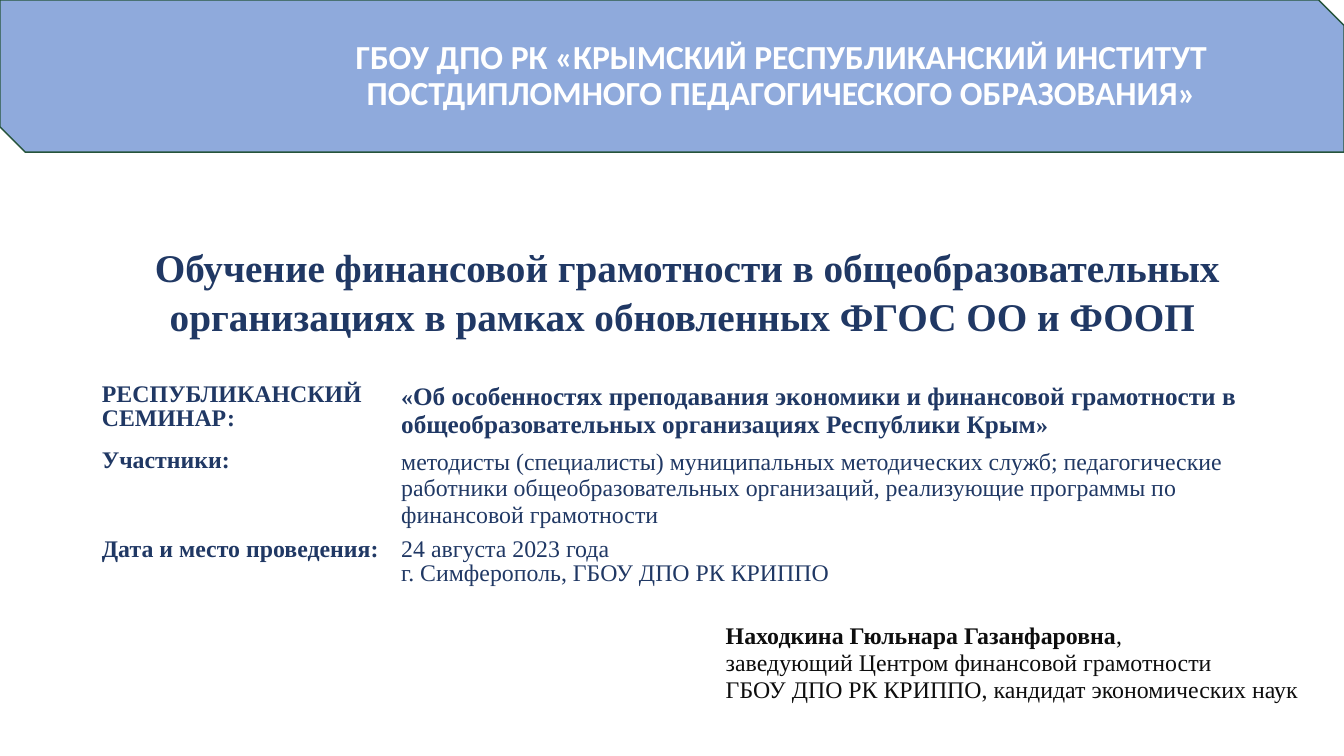
from lxml.etree import SubElement
from pptx import Presentation
from pptx.dml.color import RGBColor
from pptx.enum.shapes import MSO_SHAPE as Shape
from pptx.enum.text import MSO_ANCHOR as Anchor, PP_ALIGN as Align
from pptx.oxml.ns import qn
from pptx.util import Inches, Pt

NAVY, WHITE = "203864", "FFFFFF"
BANNER = "ГБОУ ДПО РК «КРЫМСКИЙ РЕСПУБЛИКАНСКИЙ ИНСТИТУТ ПОСТДИПЛОМНОГО ПЕДАГОГИЧЕСКОГО ОБРАЗОВАНИЯ»"
TITLE = "Обучение финансовой грамотности в общеобразовательных организациях в рамках обновленных ФГОС ОО и ФООП "
TOPIC = "Об особенностях преподавания экономики и финансовой грамотности в общеобразовательных организациях Республики Крым"
AUDIENCE = "методисты (специалисты) муниципальных методических служб; педагогические работники общеобразовательных организаций, реализующие программы по финансовой грамотности"

# Each text is a list of paragraphs; each paragraph is a list of (text, bold, size).
DETAILS = [
    ("РЕСПУБЛИКАНСКИЙ СЕМИНАР:", [[("«", True, 17), (TOPIC, True, 18), ("»", True, 17)]], 1.0),
    ("Участники:", [[(AUDIENCE, False, 17)]], 1.0),
    ("Дата и место проведения:", [[("24 августа 2023 года", False, 17)],
                                  [("г. Симферополь, ГБОУ ДПО РК КРИППО", False, 17)]], 0.9),
]
SPEAKER = [
    [("Находкина Гюльнара Газанфаровна", True, 17), (",", False, 17)],
    [("заведующий Центром финансовой грамотности", False, 17)],
    [("ГБОУ ДПО РК КРИППО, кандидат экономических наук", False, 17)],
]
COLUMN_WIDTHS = [2.97, 9.02]
ROW_HEIGHTS = [0.47, 0.51, 0.86]


def color(value):
    return RGBColor.from_string(value)


def write(frame, paragraphs, font="Times New Roman", ink=NAVY, align=Align.LEFT, spacing=1.0):
    frame.word_wrap = True
    for index, spans in enumerate(paragraphs):
        para = frame.paragraphs[0] if index == 0 else frame.add_paragraph()
        para.alignment = align
        para.line_spacing = spacing
        para.space_before = para.space_after = Pt(0)
        for text, bold, size in spans:
            span = para.add_run()
            span.text = text
            span.font.name = font
            span.font.size = Pt(size)
            span.font.bold = bold
            span.font.color.rgb = color(ink)


def set_borders(cell, bottom):
    properties = cell._tc.get_or_add_tcPr()
    for index, (side, width) in enumerate([("L", 1), ("R", 1), ("T", 1), ("B", bottom)]):
        line = SubElement(properties, qn(f"a:ln{side}"), w=str(Pt(width)))
        SubElement(SubElement(line, qn("a:solidFill")), qn("a:srgbClr"), val=WHITE)
        properties.insert(index, line)


def add_banner(page):
    banner = page.shapes.add_shape(Shape.SNIP_2_DIAG_RECTANGLE, 0, 0, Inches(13.33), Inches(1.51))
    banner.shadow.inherit = False
    banner.fill.solid()
    banner.fill.fore_color.rgb = color("8FAADC")
    banner.line.color.rgb = color("26543B")
    banner.line.width = Pt(1)
    frame = banner.text_frame
    frame.vertical_anchor = Anchor.MIDDLE
    write(frame, [[(BANNER, True, 24)]], font="Calibri", ink=WHITE, align=Align.CENTER, spacing=Pt(26))
    frame.paragraphs[0]._p.get_or_add_pPr().set("marL", str(Inches(2.17)))


def add_title(page):
    title = page.shapes.title
    title.left, title.top = Inches(0.82), Inches(1.86)
    title.width, title.height = Inches(11.99), Inches(2.04)
    title.text_frame.vertical_anchor = Anchor.MIDDLE
    write(title.text_frame, [[(TITLE, True, 28)]], align=Align.CENTER, spacing=1.05)


def add_details(page):
    table = page.shapes.add_table(len(DETAILS), 2, Inches(0.91), Inches(3.75),
                                  Inches(sum(COLUMN_WIDTHS)), Inches(sum(ROW_HEIGHTS))).table
    for column, width in zip(table.columns, COLUMN_WIDTHS):
        column.width = Inches(width)
    for index, (label, paragraphs, spacing) in enumerate(DETAILS):
        table.rows[index].height = Inches(ROW_HEIGHTS[index])
        contents = [([[(label, True, 17)]], 0.9), (paragraphs, spacing)]
        for column, (content, leading) in enumerate(contents):
            cell = table.cell(index, column)
            cell.fill.background()
            set_borders(cell, 3 if index == 0 else 1)
            write(cell.text_frame, content, spacing=leading)


def add_speaker(page):
    box = page.shapes.add_textbox(Inches(7.1), Inches(6.13), Inches(6.24), Inches(0.87))
    write(box.text_frame, SPEAKER, ink="0D0D0D", spacing=0.95)


def main():
    deck = Presentation()
    deck.slide_width, deck.slide_height = Inches(13.33), Inches(7.5)
    page = deck.slides.add_slide(deck.slide_layouts[5])
    add_banner(page)
    add_title(page)
    add_details(page)
    add_speaker(page)
    deck.save("out.pptx")


if __name__ == "__main__":
    main()
